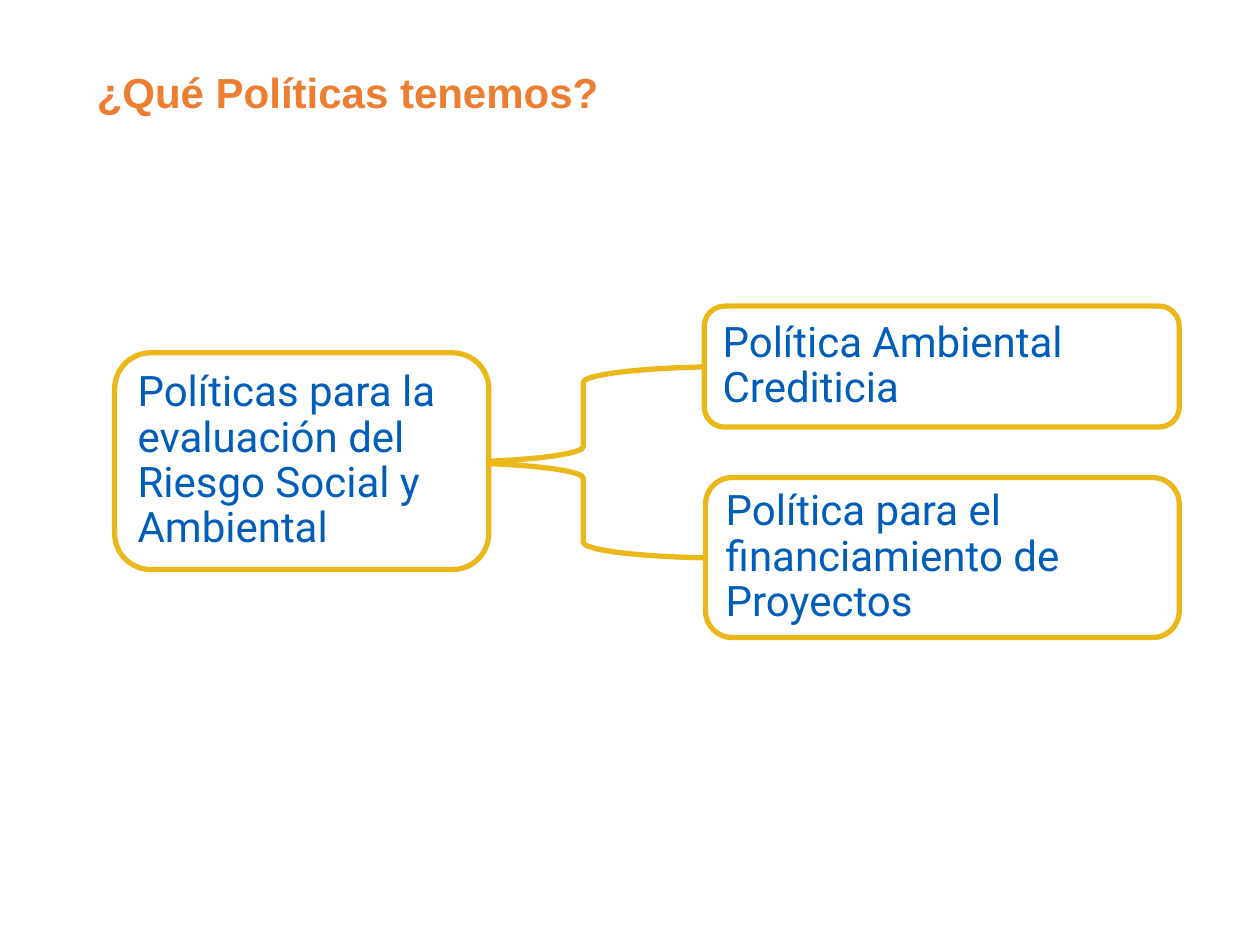
import pptx
import pptx.dml.color
import pptx.enum.shapes
import pptx.enum.text
import pptx.util
from dataclasses import dataclass

# Grid: square cells, a tenth of an inch each
COLUMNS, ROWS = 100, 75
CELL = pptx.util.Inches(0.1)


@dataclass(frozen=True)
class Theme:
    title_color: str = "ED7D31"
    text_color: str = "005DB9"
    line_color: str = "EBB81C"
    box_color: str = "FFFFFF"
    title_font: str = "Arial"
    text_font: str = "Roboto"
    text_size: int = 24
    line_width: int = 3
    line_spacing: float = 0.9


THEME = Theme()


def color(value):
    return pptx.dml.color.RGBColor.from_string(value)


def cells(*counts):
    """Turn counts of columns and rows into lengths."""
    return [round(count * CELL) for count in counts]


def write(shape, text, font_name, font_color, bold, anchor):
    text_frame = shape.text_frame
    text_frame.word_wrap = True
    text_frame.vertical_anchor = anchor
    text_frame.text = text
    paragraph = text_frame.paragraphs[0]
    paragraph.alignment = pptx.enum.text.PP_ALIGN.LEFT
    paragraph.line_spacing = THEME.line_spacing
    font = paragraph.runs[0].font
    font.name = font_name
    font.size = pptx.util.Pt(THEME.text_size)
    font.bold = bold
    font.color.rgb = color(font_color)


def add_outlined_shape(slide, kind, area):
    shape = slide.shapes.add_shape(kind, *cells(*area))
    shape.shadow.inherit = False
    shape.line.color.rgb = color(THEME.line_color)
    shape.line.width = pptx.util.Pt(THEME.line_width)
    return shape


def add_title(slide, text, area):
    title = slide.shapes.add_textbox(*cells(*area))
    write(title, text, THEME.title_font, THEME.title_color, True,
          pptx.enum.text.MSO_ANCHOR.TOP)


def add_brace(slide, area):
    brace = add_outlined_shape(slide, pptx.enum.shapes.MSO_SHAPE.LEFT_BRACE, area)
    brace.fill.background()


def add_policy_box(slide, text, area):
    box = add_outlined_shape(
        slide, pptx.enum.shapes.MSO_SHAPE.ROUNDED_RECTANGLE, area)
    box.fill.solid()
    box.fill.fore_color.rgb = color(THEME.box_color)
    write(box, text, THEME.text_font, THEME.text_color, False,
          pptx.enum.text.MSO_ANCHOR.MIDDLE)


def main():
    presentation = pptx.Presentation()
    presentation.slide_width, presentation.slide_height = cells(COLUMNS, ROWS)
    slide = presentation.slides.add_slide(presentation.slide_layouts[6])

    # Brace behind the boxes it joins
    add_brace(slide, (34.3, 29.1, 24, 15.2))

    # The two policies, then the group they belong to
    add_policy_box(slide, "Política para el financiamiento de Proyectos",
                   (56, 37.9, 37.6, 12.7))
    add_policy_box(slide, "Política Ambiental Crediticia",
                   (55.9, 24.3, 37.7, 9.6))
    add_policy_box(slide, "Políticas para la evaluación del Riesgo Social y Ambiental",
                   (9.1, 28, 29.7, 17.2))

    # Heading
    add_title(slide, "¿Qué Políticas tenemos?", (6.7, 5.2, 91, 7.1))

    presentation.save("out.pptx")


if __name__ == "__main__":
    main()
